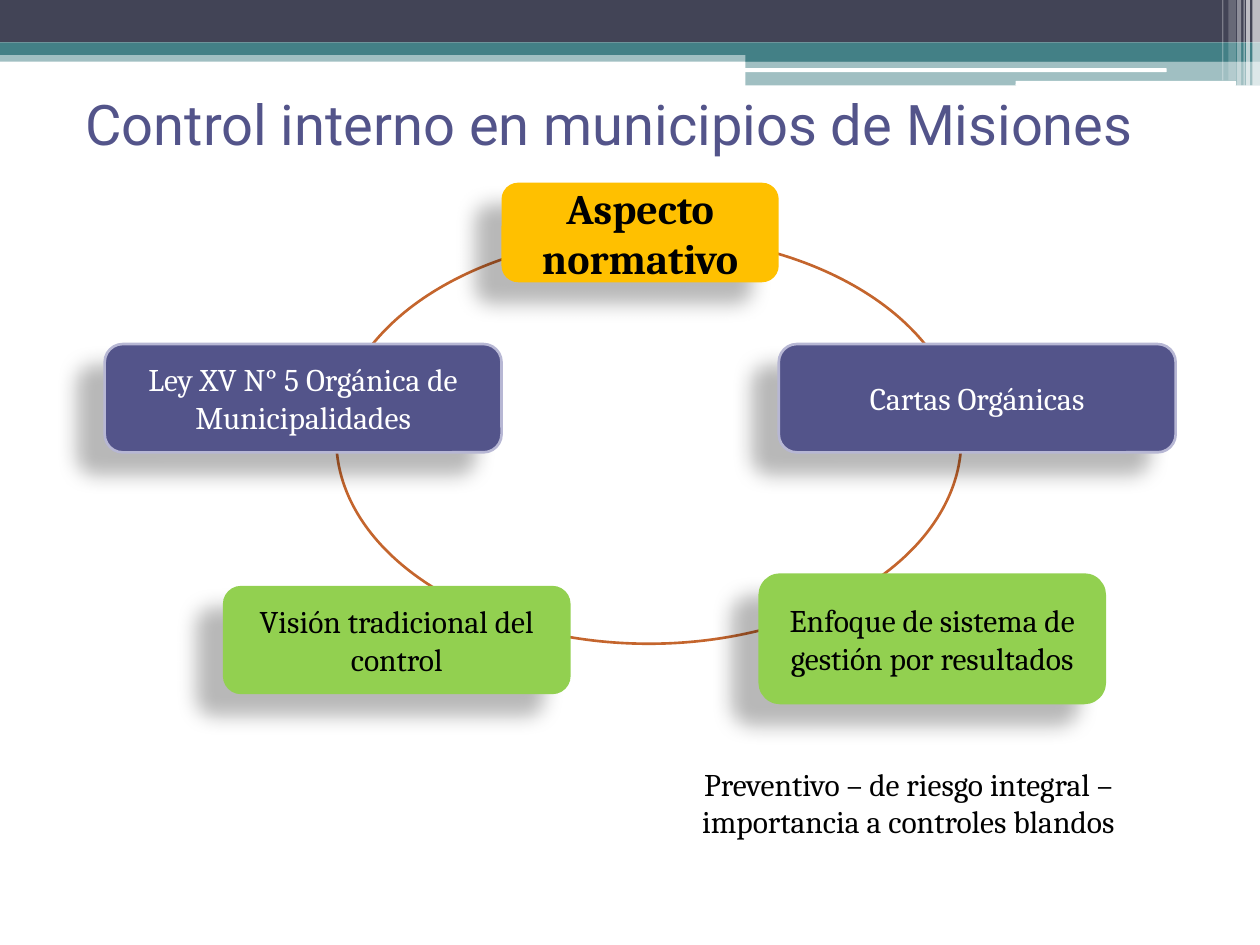
from dataclasses import dataclass

from lxml import etree
from pptx import Presentation
from pptx.dml.color import RGBColor
from pptx.enum.shapes import MSO_SHAPE
from pptx.enum.text import MSO_ANCHOR, PP_ALIGN
from pptx.oxml.ns import qn
from pptx.util import Pt

RECT = MSO_SHAPE.RECTANGLE
ROUND = MSO_SHAPE.ROUNDED_RECTANGLE
OVAL = MSO_SHAPE.OVAL
MIDDLE = MSO_ANCHOR.MIDDLE
TOP = MSO_ANCHOR.TOP
CENTER = PP_ALIGN.CENTER
LEFT = PP_ALIGN.LEFT

COLORS = {
    "white": "FFFFFF",
    "black": "000000",
    "slate": "424456",
    "teal": "438086",
    "rust": "C4652D",
    "gold": "FFC000",
    "indigo": "53548A",
    "lilac": "B7B7D4",
    "green": "92D050",
}


@dataclass
class Box:
    x: float
    y: float
    w: float
    h: float


@dataclass
class Bar:
    box: Box
    color: str
    alpha: int = 100
    kind: int = RECT


@dataclass
class Label:
    text: str
    size: int = 18
    color: str = "black"
    font: str = "Cambria"
    bold: bool = False
    align: int = CENTER


@dataclass
class Card:
    box: Box
    fill: str
    label: Label
    edge: str = ""


def rgb(name: str) -> RGBColor:
    return RGBColor.from_string(COLORS[name])


def place(box: Box) -> tuple:
    return Pt(box.x), Pt(box.y), Pt(box.w), Pt(box.h)


def fade(node, alpha: int) -> None:
    etree.SubElement(node, qn("a:alpha"), val=str(alpha * 1000))


def draw_shape(slide, kind: int, box: Box, fill: str = "", edge: str = ""):
    shape = slide.shapes.add_shape(kind, *place(box))
    shape.shadow.inherit = False
    if fill:
        shape.fill.solid()
        shape.fill.fore_color.rgb = rgb(fill)
    else:
        shape.fill.background()
    if edge:
        shape.line.color.rgb = rgb(edge)
        shape.line.width = Pt(1.5)
    else:
        shape.line.fill.background()
    return shape


def draw_bar(slide, bar: Bar) -> None:
    shape = draw_shape(slide, bar.kind, bar.box, bar.color)
    if bar.alpha < 100:
        fade(shape.element.spPr.find(qn("a:solidFill"))[0], bar.alpha)


def add_shadow(shape) -> None:
    effects = shape.element.spPr.find(qn("a:effectLst"))
    outer = etree.SubElement(
        effects, qn("a:outerShdw"), blurRad=str(Pt(11.8)), dist=str(Pt(19.7)),
        dir=str(141 * 60000), algn="ctr", rotWithShape="0")
    color = etree.SubElement(outer, qn("a:srgbClr"), val=COLORS["black"])
    fade(color, 28)


def write(shape, label: Label, anchor: int) -> None:
    frame = shape.text_frame
    frame.word_wrap = True
    frame.vertical_anchor = anchor
    line = frame.paragraphs[0]
    line.alignment = label.align
    run = line.add_run()
    run.text = label.text
    run.font.name = label.font
    run.font.size = Pt(label.size)
    run.font.bold = label.bold
    run.font.color.rgb = rgb(label.color)


def draw_card(slide, card: Card) -> None:
    shape = draw_shape(slide, ROUND, card.box, card.fill, card.edge)
    add_shadow(shape)
    write(shape, card.label, MIDDLE)


def draw_text(slide, box: Box, label: Label) -> None:
    write(slide.shapes.add_textbox(*place(box)), label, TOP)


BARS = [
    Bar(Box(0, 28.8, 720, 6.5), "teal", 50),
    Bar(Box(0, 0, 720, 24.2), "slate"),
    Bar(Box(0, 24.2, 720, 7.2), "teal"),
    Bar(Box(426, 28, 294, 7.2), "teal"),
    Bar(Box(426, 34.6, 294, 14.2), "teal", 50),
    Bar(Box(425.5, 39, 241.2, 2.2), "white", kind=ROUND),
    Bar(Box(580.3, 46.2, 126, 2.8), "white", kind=ROUND),
]

STRIPES = [
    (715.7, 4.3, 49, 65),
    (712.1, 2.2, 49, 65),
    (710.6, 0.7, 49, 60),
    (707, 2.2, 49, 40),
    (702, 4.3, 46, 20),
    (698.4, 0.7, 46, 30),
]

CARDS = [
    Card(Box(286.6, 104.4, 158.4, 56.9), "gold",
         Label("Aspecto normativo", 24, bold=True)),
    Card(Box(59.8, 196.6, 226.8, 61.9), "indigo",
         Label("Ley XV N° 5 Orgánica de Municipalidades", color="white"), "lilac"),
    Card(Box(445, 196.6, 226.8, 61.9), "indigo",
         Label("Cartas Orgánicas", color="white"), "lilac"),
    Card(Box(127.4, 334.8, 198.7, 61.9), "green",
         Label("Visión tradicional del control")),
    Card(Box(433.4, 327.6, 198.7, 74.9), "green",
         Label("Enfoque de sistema de gestión por resultados")),
]


def main() -> None:
    deck = Presentation()
    deck.slide_width, deck.slide_height = Pt(720), Pt(540)
    slide = deck.slides.add_slide(deck.slide_layouts[6])
    for bar in BARS:
        draw_bar(slide, bar)
    for x, width, height, alpha in STRIPES:
        draw_bar(slide, Bar(Box(x, 0, width, height), "white", alpha))
    draw_shape(slide, OVAL, Box(192.2, 134.6, 357.1, 233.3), edge="rust")
    draw_text(slide, Box(41.8, 47.5, 648, 84.2),
              Label("Control interno en municipios de Misiones", 32, "indigo",
                    "Roboto", align=LEFT))
    for card in CARDS:
        draw_card(slide, card)
    draw_text(slide, Box(377.3, 433.4, 283.7, 51.1),
              Label("Preventivo – de riesgo integral – importancia a controles blandos"))
    deck.save("out.pptx")


if __name__ == "__main__":
    main()
